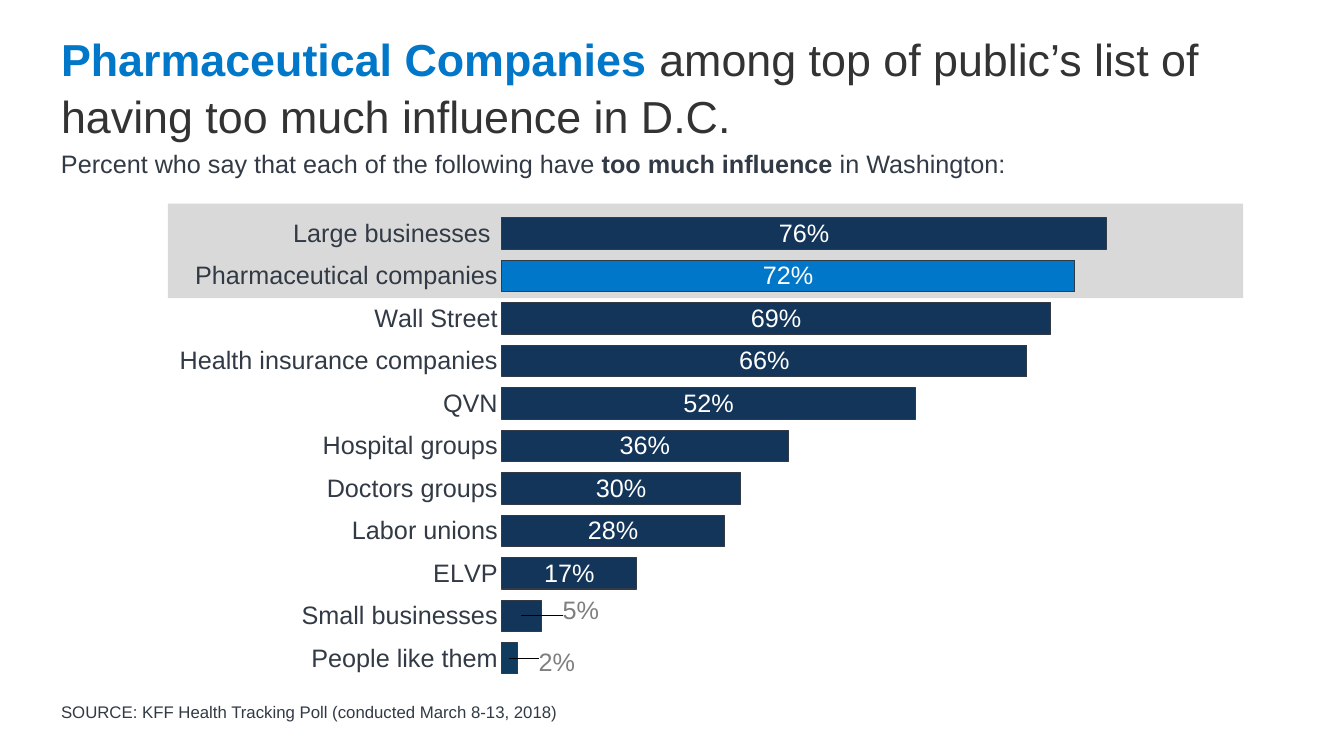
"""Builds a slide with a bar chart of groups seen as too influential in Washington."""
from lxml import etree
from pptx import Presentation
from pptx.chart.data import CategoryChartData
from pptx.dml.color import RGBColor
from pptx.enum.chart import XL_CHART_TYPE, XL_LABEL_POSITION, XL_TICK_MARK
from pptx.enum.shapes import MSO_SHAPE
from pptx.enum.text import MSO_ANCHOR
from pptx.oxml.ns import qn
from pptx.util import Pt

BAR_STACKED = XL_CHART_TYPE.BAR_STACKED
CENTER = XL_LABEL_POSITION.CENTER
NO_TICKS = XL_TICK_MARK.NONE
RECTANGLE = MSO_SHAPE.RECTANGLE
TOP, BOTTOM = MSO_ANCHOR.TOP, MSO_ANCHOR.BOTTOM
FONT = "Arial"
SLATE, NAVY, BLUE, CHARCOAL = "323A45", "133559", "0077C8", "333333"


def style(font, size, color, bold=False):
    font.name, font.size, font.bold = FONT, Pt(size), bold
    font.color.rgb = RGBColor.from_string(color)


def manual_layout(**settings):
    layout = etree.Element(qn("c:layout"))
    manual = etree.SubElement(layout, qn("c:manualLayout"))
    for tag, value in settings.items():
        etree.SubElement(manual, qn("c:" + tag)).set("val", str(value))
    return layout


influence = [
    ("Large businesses ", 0.76),
    ("Pharmaceutical companies", 0.72),
    ("Wall Street", 0.69),
    ("Health insurance companies", 0.66),
    ("QVN", 0.52),
    ("Hospital groups", 0.36),
    ("Doctors groups", 0.30),
    ("Labor unions", 0.28),
    ("ELVP", 0.17),
    ("Small businesses", 0.05),
    ("People like them", 0.02),
]

prs = Presentation()
prs.slide_width, prs.slide_height = Pt(960), Pt(540)
slide = prs.slides.add_slide(prs.slide_layouts[6])

top_two_band = slide.shapes.add_shape(RECTANGLE, Pt(120), Pt(145.5), Pt(768), Pt(67.5))
top_two_band.shadow.inherit = False
top_two_band.fill.solid()
top_two_band.fill.fore_color.rgb = RGBColor.from_string("D9D9D9")
top_two_band.line.fill.background()

poll_data = CategoryChartData(number_format="0%")
poll_data.categories = [group for group, share in influence]
poll_data.add_series("Series 1", [share for group, share in influence])
chart = slide.shapes.add_chart(
    BAR_STACKED, Pt(84.25), Pt(145.5), Pt(846), Pt(342), poll_data
).chart
chart.has_legend = False
chart.has_title = False
style(chart.font, 14, CHARCOAL, True)
chart.plots[0].gap_width = 35
chart.plots[0].overlap = 100
chart.plots[0].vary_by_categories = False
plot_area = chart.plots[0]._element.getparent()
plot_area.insert(0, manual_layout(
    layoutTarget="inner", xMode="edge", yMode="edge", x=0.324, y=0.018, w=0.672, h=0.976))

groups_axis = chart.category_axis
groups_axis.reverse_order = True
groups_axis.major_tick_mark = NO_TICKS
groups_axis.format.line.fill.background()
style(groups_axis.tick_labels.font, 18, SLATE)

share_axis = chart.value_axis
share_axis.minimum_scale, share_axis.maximum_scale = 0, 1
share_axis.major_unit = 0.1
share_axis.has_major_gridlines = False
share_axis.visible = False

shares = chart.plots[0].series[0]
shares.format.fill.solid()
shares.format.fill.fore_color.rgb = RGBColor.from_string(NAVY)
shares.format.line.color.rgb = RGBColor.from_string(SLATE)
shares.format.line.width = Pt(0.75)
for index, color in [(1, BLUE), (10, "0E3B5E")]:
    bar = shares.points[index].format
    bar.fill.solid()
    bar.fill.fore_color.rgb = RGBColor.from_string(color)
    bar.line.color.rgb = RGBColor.from_string(SLATE)
    bar.line.width = Pt(0.75)

share_labels = shares.data_labels
share_labels.show_value = True
share_labels.number_format = "0%"
share_labels.number_format_is_linked = False
share_labels.position = CENTER
style(share_labels.font, 18, "FFFFFF")
for index, shift_x, shift_y in [(9, 0.05, -0.01), (10, 0.04, 0.01)]:
    outside_label = shares.points[index].data_label
    style(outside_label.font, 18, "7F7F7F")
    outside_label.position = CENTER
    label_index = share_labels._element.xpath(f'c:dLbl/c:idx[@val="{index}"]')[0]
    label_index.addnext(manual_layout(x=shift_x, y=shift_y))

texts = [
    (36.5, 17.5, 888, 72, TOP, 32, 1.05, [
        ("Pharmaceutical Companies ", BLUE, True),
        ("among top of public’s list of having too much influence in D.C.", CHARCOAL, False)]),
    (36.5, 102.5, 729, 29, TOP, 18, 1, [
        ("Percent who say that each of the following have ", SLATE, False),
        ("too much influence ", SLATE, True),
        ("in Washington:", SLATE, False)]),
    (36.5, 476.5, 646.5, 43, BOTTOM, 12, 1, [
        ("SOURCE: KFF Health Tracking Poll (conducted March 8-13, 2018)", SLATE, False)]),
]
for left, top, width, height, anchor, size, spacing, pieces in texts:
    frame = slide.shapes.add_textbox(Pt(left), Pt(top), Pt(width), Pt(height)).text_frame
    frame.word_wrap = True
    frame.vertical_anchor = anchor
    paragraph = frame.paragraphs[0]
    paragraph.line_spacing = spacing
    for words, color, bold in pieces:
        run = paragraph.add_run()
        run.text = words
        style(run.font, size, color, bold)

prs.save("out.pptx")
